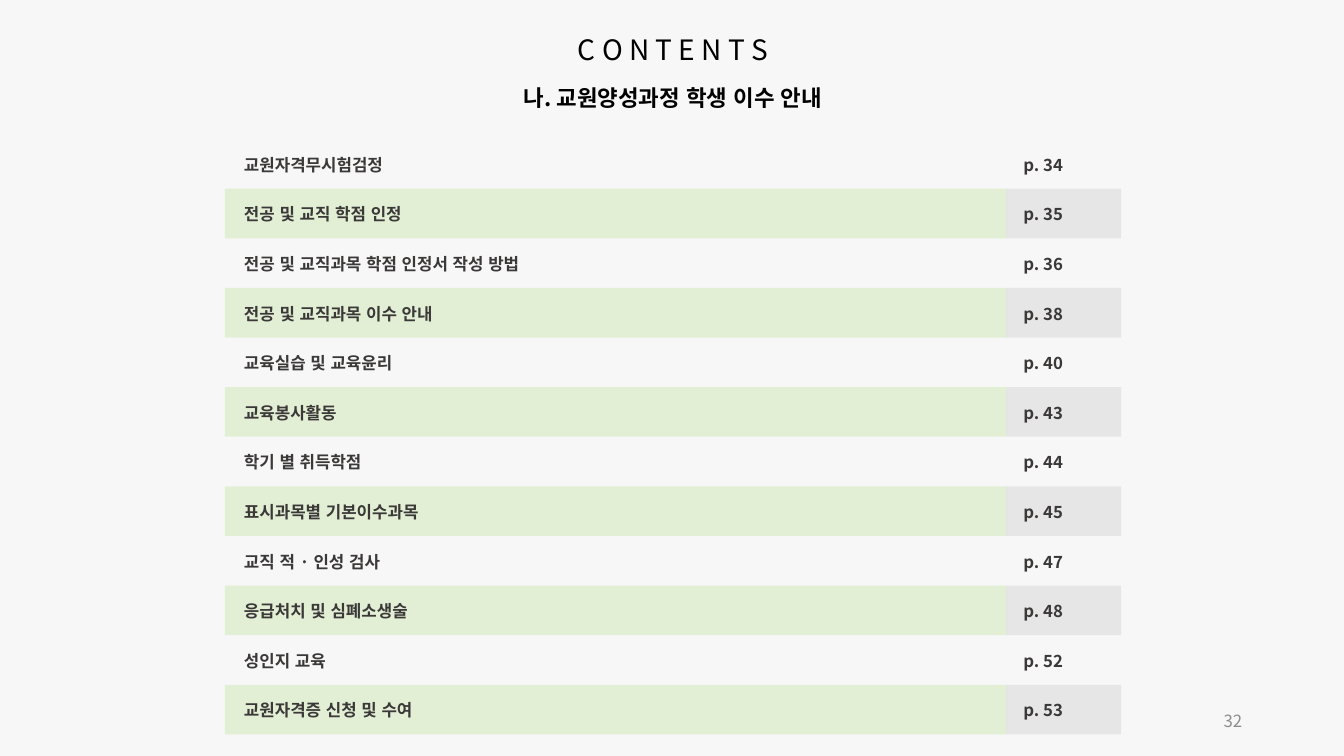
import pptx
import pptx.util
import pptx.dml.color
import pptx.enum.lang
import pptx.enum.text
import pptx.oxml.ns
from lxml import etree

Inches = pptx.util.Inches
ALIGN = pptx.enum.text.PP_ALIGN
ANCHOR = pptx.enum.text.MSO_ANCHOR
qn = pptx.oxml.ns.qn

FONT = "Noto Sans CJK KR"
COLORS = {
    "background": "F7F7F7",
    "heading": "000000",
    "entry": "3B3838",
    "topic_band": "92D050",
    "page_band": "A5A5A5",
    "page_number": "8C8C8C",
}
BAND_OPACITY = 20  # percent
NO_STYLE_NO_GRID = "{2D5ABB26-0587-4C30-8999-92F81FD0307C}"

CONTENTS = [
    ("교원자격무시험검정", 34),
    ("전공 및 교직 학점 인정", 35),
    ("전공 및 교직과목 학점 인정서 작성 방법", 36),
    ("전공 및 교직과목 이수 안내", 38),
    ("교육실습 및 교육윤리", 40),
    ("교육봉사활동", 43),
    ("학기 별 취득학점", 44),
    ("표시과목별 기본이수과목", 45),
    ("교직 적 · 인성 검사", 47),
    ("응급처치 및 심폐소생술", 48),
    ("성인지 교육", 52),
    ("교원자격증 신청 및 수여", 53),
]


def rgb(name):
    return pptx.dml.color.RGBColor.from_string(COLORS[name])


def write(frame, text, size, color, bold=False, align=ALIGN.LEFT):
    frame.text = text
    paragraph = frame.paragraphs[0]
    paragraph.alignment = align
    font = paragraph.runs[0].font
    font.size = pptx.util.Pt(size)
    font.bold = bold
    font.color.rgb = rgb(color)
    font.name = FONT
    font.language_id = pptx.enum.lang.MSO_LANGUAGE_ID.KOREAN
    # East Asian typeface for the Korean text
    properties = paragraph.runs[0]._r.get_or_add_rPr()
    etree.SubElement(properties, qn("a:ea")).set("typeface", FONT)


def add_line(slide, box, text, size, color, bold=False,
             align=ALIGN.CENTER, anchor=ANCHOR.TOP):
    frame = slide.shapes.add_textbox(*map(Inches, box)).text_frame
    frame.word_wrap = True
    frame.vertical_anchor = anchor
    write(frame, text, size, color, bold, align)


def fill_band(cell, color):
    cell.fill.solid()
    cell.fill.fore_color.rgb = rgb(color)
    properties = cell._tc.find(qn("a:tcPr"))
    tint = next(properties.iter(qn("a:srgbClr")))
    etree.SubElement(tint, qn("a:alpha")).set("val", str(BAND_OPACITY * 1000))


def add_contents_table(slide, box, page_width):
    left, top, width, height = box
    frame = slide.shapes.add_table(len(CONTENTS), 2, *map(Inches, box))
    next(frame._element.iter(qn("a:tableStyleId"))).text = NO_STYLE_NO_GRID
    table = frame.table
    table.first_row = False
    table.horz_banding = False
    table.columns[0].width = Inches(width - page_width)
    table.columns[1].width = Inches(page_width)

    for index, (topic, page) in enumerate(CONTENTS):
        table.rows[index].height = Inches(height / len(CONTENTS))
        entries = ((topic, "topic_band", 0.19),
                   (f"p. {page}", "page_band", 0.17))
        for column, (text, band, indent) in enumerate(entries):
            cell = table.cell(index, column)
            cell.vertical_anchor = ANCHOR.MIDDLE
            cell.margin_left = Inches(indent)
            write(cell.text_frame, text, 12, "entry", bold=True)
            if index % 2:
                fill_band(cell, band)
            else:
                cell.fill.background()


def build_contents_slide(deck):
    slide = deck.slides.add_slide(deck.slide_layouts[6])
    slide.background.fill.solid()
    slide.background.fill.fore_color.rgb = rgb("background")

    # Headings
    add_line(slide, (4.41, 0.27, 4.53, 0.44), "C O N T E N T S", 20, "heading")
    add_line(slide, (3.99, 0.79, 5.37, 0.37),
             "나. 교원양성과정 학생 이수 안내", 16, "heading", bold=True)

    # Topics and their pages
    add_contents_table(slide, (2.23, 1.38, 8.89, 5.91), page_width=1.14)

    # Page number
    add_line(slide, (9.42, 6.95, 3, 0.4), "32", 12, "page_number",
             align=ALIGN.RIGHT, anchor=ANCHOR.MIDDLE)


def main():
    deck = pptx.Presentation()
    deck.slide_width = Inches(13.33)
    deck.slide_height = Inches(7.5)
    build_contents_slide(deck)
    deck.save("out.pptx")


if __name__ == "__main__":
    main()
